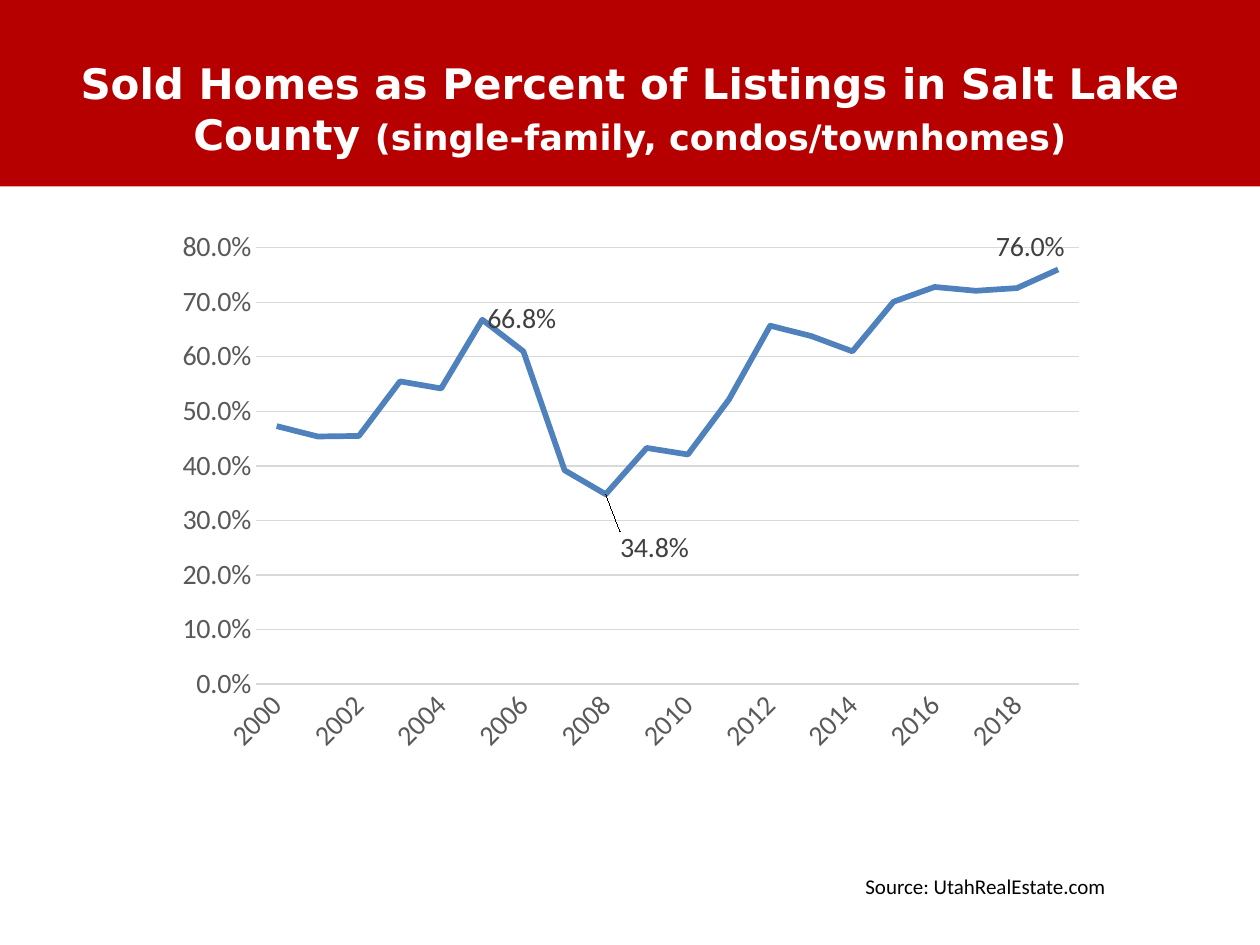
"""Build a slide charting sold homes as a percent of listings."""
import pptx
import pptx.chart.data
import pptx.dml.color
import pptx.enum.chart
import pptx.enum.shapes
import pptx.enum.text
import pptx.oxml
import pptx.util
from pptx.util import Inches

HEADING = [
    ("Sold Homes as Percent of Listings in Salt Lake County ", 24),
    ("(single-family, condos/townhomes)", 20),
]
SOURCE = [("Source: UtahRealEstate.com", 12)]
FIRST_YEAR = 2000
SOLD_SHARES = [
    0.473, 0.454, 0.455, 0.555, 0.542, 0.668, 0.610, 0.392, 0.348, 0.433,
    0.421, 0.522, 0.657, 0.638, 0.610, 0.701, 0.728, 0.721, 0.726, 0.760,
]
LABEL_POSITION = pptx.enum.chart.XL_LABEL_POSITION
CALLOUTS = [
    (2005, LABEL_POSITION.RIGHT, None),
    (2008, LABEL_POSITION.RIGHT, (0.01, 0.1)),
    (2019, LABEL_POSITION.ABOVE, (-0.03, 0)),
]
PLOT_AREA = {"x": 0.1, "y": 0.05, "w": 0.88, "h": 0.8}
NS = 'xmlns:c="http://schemas.openxmlformats.org/drawingml/2006/chart"'


def color(hex_code):
    return pptx.dml.color.RGBColor.from_string(hex_code)


def style_font(font, name="Calibri", size=16, hex_code="595959", bold=False):
    font.name = name
    font.size = pptx.util.Pt(size)
    font.bold = bold
    font.color.rgb = color(hex_code)


def style_line(line, hex_code, width):
    line.color.rgb = color(hex_code)
    line.width = pptx.util.Pt(width)


def add_text(slide, runs, box, align=None, wrap=True, **font_format):
    frame = slide.shapes.add_textbox(*map(Inches, box)).text_frame
    frame.word_wrap = wrap
    paragraph = frame.paragraphs[0]
    paragraph.alignment = align
    for text, size in runs:
        run = paragraph.add_run()
        run.text = text
        style_font(run.font, size=size, **font_format)


def manual_layout(values, inner=False):
    target = '<c:layoutTarget val="inner"/>' if inner else ""
    modes = "".join(f'<c:{key}Mode val="edge"/>' for key in "xy") if inner else ""
    parts = "".join(f'<c:{key} val="{value}"/>' for key, value in values.items())
    return pptx.oxml.parse_xml(
        f"<c:layout {NS}><c:manualLayout>{target}{modes}{parts}"
        "</c:manualLayout></c:layout>"
    )


def style_axes(chart):
    years, shares = chart.category_axis, chart.value_axis
    for axis in (years, shares):
        axis.major_tick_mark = pptx.enum.chart.XL_TICK_MARK.NONE
        axis.minor_tick_mark = pptx.enum.chart.XL_TICK_MARK.NONE
        style_font(axis.tick_labels.font)
    style_line(years.format.line, "D9D9D9", 0.75)
    years._element.xpath("c:txPr/a:bodyPr")[0].set("rot", "-2700000")
    skip = pptx.oxml.parse_xml(f'<c:tickLblSkip {NS} val="2"/>')
    years._element.xpath("c:noMultiLvlLbl")[0].addprevious(skip)
    shares.minimum_scale, shares.maximum_scale, shares.major_unit = 0, 0.8, 0.1
    shares.tick_labels.number_format = "0.0%"
    shares.tick_labels.number_format_is_linked = False
    shares.format.line.fill.background()
    style_line(shares.major_gridlines.format.line, "D9D9D9", 0.75)


def add_callouts(series):
    series.data_labels.show_value = False
    for year, position, offset in CALLOUTS:
        index = year - FIRST_YEAR
        label = series.points[index].data_label
        label.position = position
        style_font(label.font, hex_code="404040")
        if offset:
            idx = series._element.xpath(f'.//c:dLbl/c:idx[@val="{index}"]')[0]
            idx.addnext(manual_layout(dict(zip("xy", offset))))
    leader_lines = pptx.oxml.parse_xml(
        f'<c:extLst {NS}><c:ext uri="{{CE6537A1-D6FC-4f65-9D91-7224C49458BB}}" '
        'xmlns:c15="http://schemas.microsoft.com/office/drawing/2012/chart">'
        '<c15:showLeaderLines val="1"/></c:ext></c:extLst>'
    )
    series._element.xpath("c:dLbls")[0].append(leader_lines)


def add_share_chart(slide):
    data = pptx.chart.data.CategoryChartData(number_format="0.0%")
    data.categories = [str(FIRST_YEAR + i) for i in range(len(SOLD_SHARES))]
    data.add_series("Series 1", SOLD_SHARES)
    box = map(Inches, (1.29, 1.75, 7.42, 4.33))
    chart = slide.shapes.add_chart(
        pptx.enum.chart.XL_CHART_TYPE.LINE, *box, data
    ).chart
    chart.has_legend = chart.has_title = False
    style_font(chart.font, hex_code="000000")
    plot_area = chart._chartSpace.xpath("c:chart/c:plotArea")[0]
    for layout in plot_area.xpath("c:layout"):
        plot_area.remove(layout)
    plot_area.insert(0, manual_layout(PLOT_AREA, inner=True))
    plot = chart.plots[0]
    plot.vary_by_categories = False
    series = plot.series[0]
    series.smooth = False
    series.marker.style = pptx.enum.chart.XL_MARKER_STYLE.NONE
    style_line(series.format.line, "4F81BD", 3.25)
    style_axes(chart)
    add_callouts(series)


def main():
    deck = pptx.Presentation()
    deck.slide_width, deck.slide_height = Inches(10), Inches(7.5)
    slide = deck.slides.add_slide(deck.slide_layouts[6])
    banner = slide.shapes.add_shape(
        pptx.enum.shapes.MSO_SHAPE.RECTANGLE, 0, 0, deck.slide_width, Inches(1.48)
    )
    banner.shadow.inherit = False
    banner.fill.solid()
    banner.fill.fore_color.rgb = color("B60000")
    banner.line.fill.background()
    add_text(slide, HEADING, (0.5, 0.41, 9, 1.25),
             align=pptx.enum.text.PP_ALIGN.CENTER,
             name="DejaVu Sans", hex_code="FFFFFF", bold=True)
    add_text(slide, SOURCE, (6.77, 6.88, 2.13, 0.3), wrap=False, hex_code="000000")
    add_share_chart(slide)
    deck.save("out.pptx")


if __name__ == "__main__":
    main()
